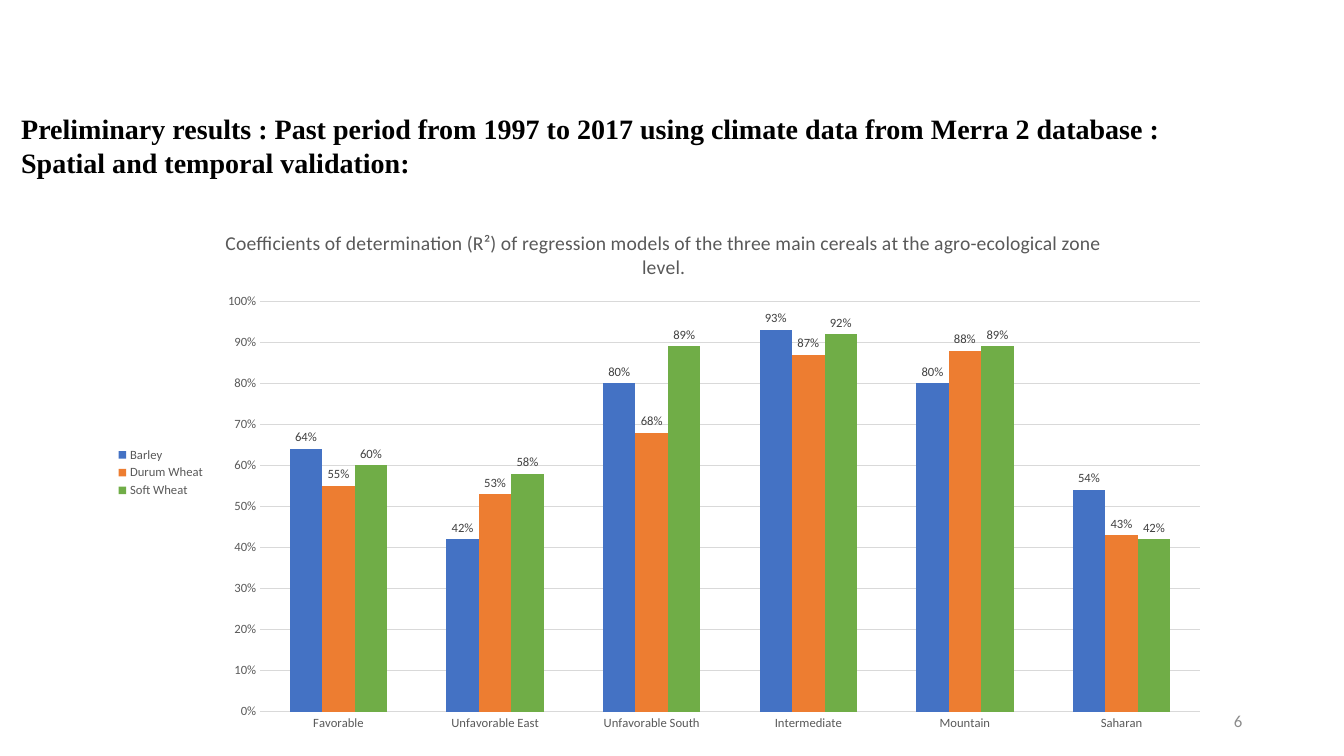
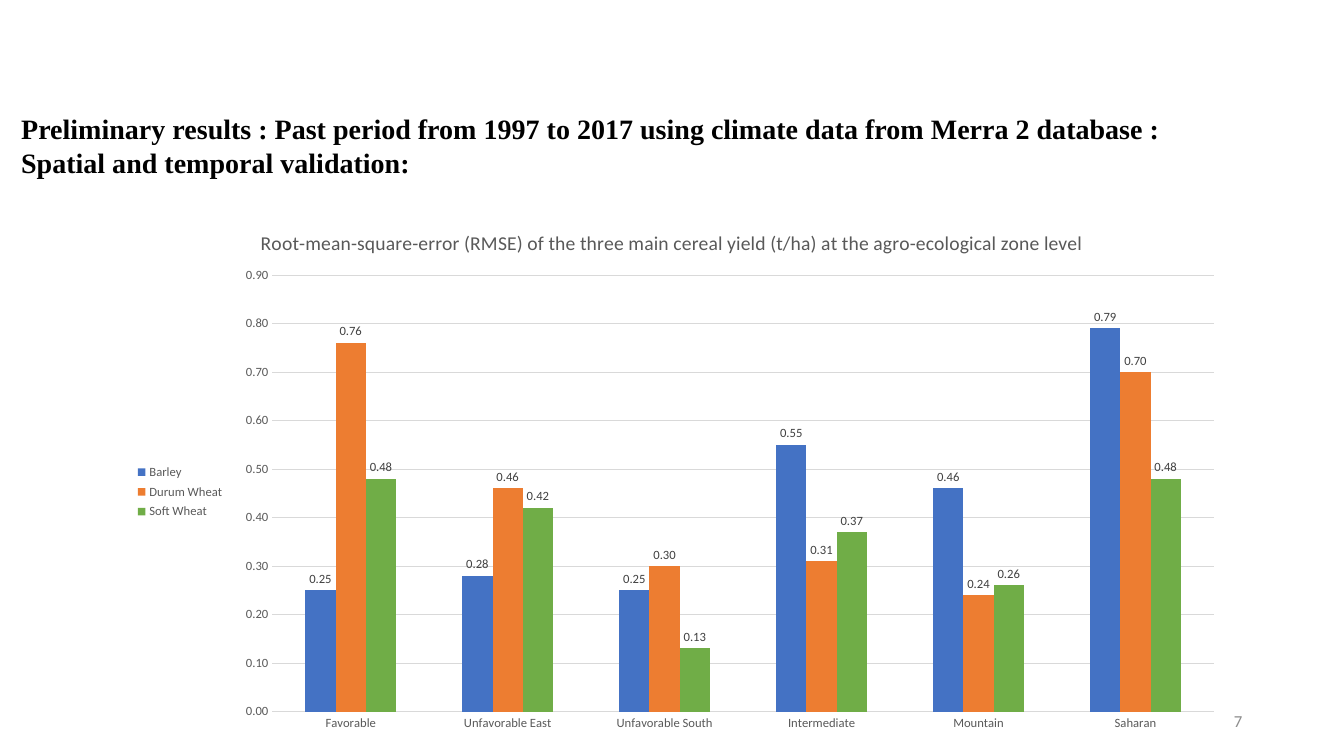
from lxml import etree
from pptx import Presentation
from pptx import util as u
from pptx.chart import data as chart_data
from pptx.dml import color
from pptx.enum import chart as ch
from pptx.enum import text
from pptx.oxml import ns

# Shared style
HEADING = ("Preliminary results : Past period from 1997 to 2017 using climate data "
           "from Merra 2 database : Spatial and temporal validation:")
ZONES = ["Favorable", "Unfavorable East", "Unfavorable South",
         "Intermediate", "Mountain", "Saharan"]
CEREALS = {"Barley": "4472C4", "Durum Wheat": "ED7D31", "Soft Wheat": "70AD47"}
GREY, LABEL_GREY, LINE_GREY, NUMBER_GREY = "595959", "404040", "D9D9D9", "8C8C8C"
CHART_TOP, CHART_HEIGHT = 2.05, 5.3

# Boxes are left, top, width, height in inches on the slide
SLIDES = [
    dict(number="6", left=1.04, width=11.08, gap=182, format="0%", top_value=1, step=0.1,
         title="Coefficients of determination (R²) of regression models of the "
               "three main cereals at the agro-ecological zone level.",
         title_box=(2.2, 2.24), legend_box=(1.12, 4.41, 0.95, 0.56),
         plot_box=(2.58, 2.99, 9.32, 4.07),
         values=[[0.64, 0.42, 0.8, 0.93, 0.8, 0.54],
                 [0.55, 0.53, 0.68, 0.87, 0.88, 0.43],
                 [0.6, 0.58, 0.89, 0.92, 0.89, 0.42]]),
    dict(number="7", left=1.21, width=11.04, gap=219, format="0.00", top_value=0.9, step=0.1,
         title="Root-mean-square-error (RMSE) of the three main cereal yield (t/ha) "
               "at the agro-ecological zone level",
         title_box=(2.55, 2.24), legend_box=(1.31, 4.56, 0.95, 0.64),
         plot_box=(2.7, 2.73, 9.34, 4.33),
         values=[[0.25, 0.28, 0.25, 0.55, 0.46, 0.79],
                 [0.76, 0.46, 0.3, 0.31, 0.24, 0.7],
                 [0.48, 0.42, 0.13, 0.37, 0.26, 0.48]]),
]


def style_font(font, size, hex_color, name="Calibri", bold=False):
    font.size, font.name, font.bold = u.Pt(size), name, bold
    font.color.rgb = color.RGBColor.from_string(hex_color)


def place_part(element, index, box, page):
    """Give a chart part a fixed place, as fractions of the chart."""
    for old in element.findall(ns.qn("c:layout")):
        element.remove(old)
    layout = etree.Element(ns.qn("c:layout"))
    manual = etree.SubElement(layout, ns.qn("c:manualLayout"))
    if element.tag == ns.qn("c:plotArea"):
        etree.SubElement(manual, ns.qn("c:layoutTarget")).set("val", "inner")
    for mode in ("xMode", "yMode"):
        etree.SubElement(manual, ns.qn("c:" + mode)).set("val", "edge")
    fractions = [(box[0] - page["left"]) / page["width"],
                 (box[1] - CHART_TOP) / CHART_HEIGHT]
    if len(box) == 4:
        fractions += [box[2] / page["width"], box[3] / CHART_HEIGHT]
    for key, fraction in zip("xywh", fractions):
        etree.SubElement(manual, ns.qn("c:" + key)).set("val", f"{fraction:.4f}")
    element.insert(index, layout)


presentation = Presentation()
presentation.slide_width, presentation.slide_height = u.Inches(13.33), u.Inches(7.5)

for page in SLIDES:
    slide = presentation.slides.add_slide(presentation.slide_layouts[5])

    # Slide number
    number = slide.shapes.add_textbox(u.Inches(9.42), u.Inches(6.95), u.Inches(3), u.Inches(0.4))
    frame = number.text_frame
    frame.word_wrap = True
    frame.vertical_anchor = text.MSO_ANCHOR.MIDDLE
    frame.text = page["number"]
    frame.paragraphs[0].alignment = text.PP_ALIGN.RIGHT
    style_font(frame.paragraphs[0].runs[0].font, 12, NUMBER_GREY)

    # Heading
    heading = slide.shapes.title
    heading.left, heading.top = u.Inches(0.11), u.Inches(1.06)
    heading.width, heading.height = u.Inches(12.14), u.Inches(0.77)
    frame = heading.text_frame
    frame.auto_size = text.MSO_AUTO_SIZE.NONE
    frame.vertical_anchor = text.MSO_ANCHOR.TOP
    frame.text = HEADING
    frame.paragraphs[0].alignment = text.PP_ALIGN.LEFT
    style_font(frame.paragraphs[0].runs[0].font, 20, "000000", "Times New Roman", True)

    # Chart
    table = chart_data.CategoryChartData(number_format=page["format"])
    table.categories = ZONES
    for cereal, values in zip(CEREALS, page["values"]):
        table.add_series(cereal, values)
    chart = slide.shapes.add_chart(
        ch.XL_CHART_TYPE.COLUMN_CLUSTERED, u.Inches(page["left"]), u.Inches(CHART_TOP),
        u.Inches(page["width"]), u.Inches(CHART_HEIGHT), table).chart
    style_font(chart.font, 10, "000000")

    # Chart title and legend
    title = chart.chart_title
    title.text_frame.text = page["title"]
    style_font(title.text_frame.paragraphs[0].runs[0].font, 14, GREY)
    title.include_in_layout = False
    chart.has_legend = True
    chart.legend.position = ch.XL_LEGEND_POSITION.LEFT
    chart.legend.include_in_layout = False
    style_font(chart.legend.font, 9, GREY)

    # Axes
    for axis in (chart.category_axis, chart.value_axis):
        axis.major_tick_mark = axis.minor_tick_mark = ch.XL_TICK_MARK.NONE
        style_font(axis.tick_labels.font, 9, GREY)
    value_axis = chart.value_axis
    value_axis.minimum_scale, value_axis.maximum_scale = 0, page["top_value"]
    value_axis.major_unit = page["step"]
    value_axis.tick_labels.number_format = page["format"]
    value_axis.tick_labels.number_format_is_linked = False
    value_axis.format.line.fill.background()
    for line in (chart.category_axis.format.line, value_axis.major_gridlines.format.line):
        line.color.rgb = color.RGBColor.from_string(LINE_GREY)
        line.width = u.Pt(0.75)

    # Columns and their labels
    plot = chart.plots[0]
    plot.gap_width, plot.overlap, plot.vary_by_categories = page["gap"], 0, False
    for series, hex_color in zip(plot.series, CEREALS.values()):
        series.format.fill.solid()
        series.format.fill.fore_color.rgb = color.RGBColor.from_string(hex_color)
        labels = series.data_labels
        labels.show_value = True
        labels.number_format, labels.number_format_is_linked = page["format"], False
        labels.position = ch.XL_LABEL_POSITION.OUTSIDE_END
        style_font(labels.font, 9, LABEL_GREY)

    # Places inside the chart
    chart_part = chart.element.find(ns.qn("c:chart"))
    for tag, index, box in (("c:title", 1, "title_box"), ("c:plotArea", 0, "plot_box"),
                            ("c:legend", 1, "legend_box")):
        place_part(chart_part.find(ns.qn(tag)), index, page[box], page)

presentation.save("out.pptx")
